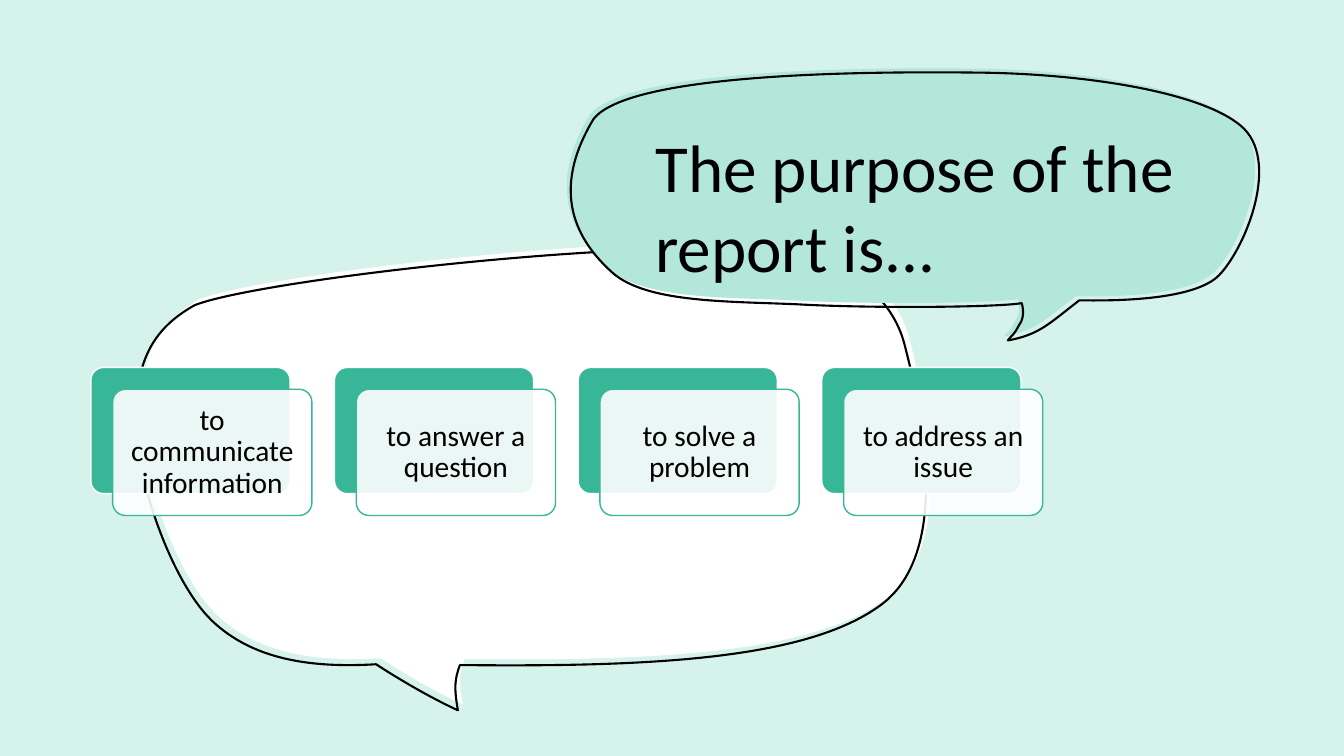
from dataclasses import dataclass
from typing import NamedTuple

from lxml import etree
from pptx import Presentation
from pptx import util as u
from pptx.dml.color import RGBColor
from pptx.enum import shapes, text
from pptx.oxml.ns import qn
from pptx.shapes.autoshape import Shape
from pptx.slide import Slide


@dataclass(frozen=True)
class Theme:
    font: str = "Calibri"
    title_size: float = 48
    card_size: float = 21
    outline_width: float = 1.5
    card_line_width: float = 1
    ink: RGBColor = RGBColor(0x00, 0x00, 0x00)
    paper: RGBColor = RGBColor(0xFF, 0xFF, 0xFF)
    backdrop: RGBColor = RGBColor(0xD5, 0xF2, 0xEB)
    mint: RGBColor = RGBColor(0xB2, 0xE7, 0xDA)
    green: RGBColor = RGBColor(0x38, 0xB6, 0x98)
    card_alpha: int = 90


class Point(NamedTuple):
    x: float
    y: float


class Curve(NamedTuple):
    control_a: Point
    control_b: Point
    end: Point


class Box(NamedTuple):
    left: float
    top: float
    width: float
    height: float


@dataclass(frozen=True)
class Bubble:
    box: Box
    start: Point
    curves: list[Curve]
    fill: RGBColor
    outline_shift: Point


THEME = Theme()
SLIDE_WIDTH, SLIDE_HEIGHT = u.Cm(33.87), u.Cm(19.05)
CARD_LEFT, CARD_TOP, CARD_PITCH = 2.29, 9.26, 6.14
CARD_WIDTH, CARD_HEIGHT, CARD_OFFSET = 5.02, 3.18, 0.55
CARD_MARGIN = 0.23

PURPOSES = [
    "to communicate information",
    "to answer a question",
    "to solve a problem",
    "to address an issue",
]


def curve(ax: float, ay: float, bx: float, by: float, x: float, y: float) -> Curve:
    return Curve(Point(ax, ay), Point(bx, by), Point(x, y))


ANSWER_BUBBLE = Bubble(
    Box(3.56, 6.12, 19.91, 11.63),
    Point(9.6, 16.59),
    [
        curve(7.92, 16.69, 6.48, 16.46, 5.46, 15.49),
        curve(4.47, 14.53, 3.63, 12.12, 3.58, 10.8),
        curve(3.51, 9.47, 3.63, 8.31, 5.03, 7.54),
        curve(6.63, 6.91, 15.9, 5.84, 19.74, 6.17),
        curve(21.51, 6.38, 22.61, 7.37, 22.91, 8.51),
        curve(23.32, 10.08, 24.16, 13.77, 22.3, 15.11),
        curve(20.42, 16.48, 16.46, 16.66, 11.71, 16.61),
        curve(11.58, 16.97, 11.56, 17.17, 11.66, 17.75),
        curve(10.62, 17.27, 9.6, 16.59, 9.6, 16.59),
    ],
    THEME.paper,
    Point(-0.12, 0.15),
)

TITLE_BUBBLE = Bubble(
    Box(14.27, 1.73, 17.35, 6.76),
    Point(25.65, 7.54),
    [
        curve(24.99, 7.65, 21.77, 7.67, 20.02, 7.57),
        curve(18.26, 7.49, 16.18, 7.54, 15.32, 6.76),
        curve(14.45, 5.97, 13.74, 4.75, 14.86, 2.9),
        curve(15.77, 1.73, 21.77, 1.7, 24.49, 1.73),
        curve(27.2, 1.75, 30.15, 2.21, 31.17, 3.07),
        curve(32.18, 3.91, 31.32, 6.1, 30.63, 6.83),
        curve(29.95, 7.54, 27.56, 7.47, 27.1, 7.47),
        curve(26.34, 8.05, 26.11, 8.33, 25.3, 8.48),
        curve(25.45, 8.28, 25.43, 8.38, 25.58, 8.1),
        curve(25.76, 7.87, 25.65, 7.54, 25.65, 7.54),
    ],
    THEME.mint,
    Point(0.1, 0.1),
)


def add_command(trail, tag: str, points: tuple[Point, ...], box: Box) -> None:
    command = etree.SubElement(trail, qn(tag))
    for point in points:
        spot = etree.SubElement(command, qn("a:pt"))
        spot.set("x", str(int(u.Cm(point.x - box.left))))
        spot.set("y", str(int(u.Cm(point.y - box.top))))


def draw_outline(slide: Slide, bubble: Bubble, shift: Point) -> Shape:
    box = bubble.box
    builder = slide.shapes.build_freeform(u.Cm(bubble.start.x), u.Cm(bubble.start.y))
    builder.add_line_segments([(u.Cm(c.end.x), u.Cm(c.end.y)) for c in bubble.curves])
    outline = builder.convert_to_shape()
    outline.left, outline.top = u.Cm(box.left + shift.x), u.Cm(box.top + shift.y)
    outline.width, outline.height = u.Cm(box.width), u.Cm(box.height)
    outline.shadow.inherit = False
    trail = outline.element.find(f".//{qn('a:path')}")
    for command in list(trail):
        trail.remove(command)
    trail.set("w", str(int(outline.width)))
    trail.set("h", str(int(outline.height)))
    add_command(trail, "a:moveTo", (bubble.start,), box)
    for segment in bubble.curves:
        add_command(trail, "a:cubicBezTo", segment, box)
    etree.SubElement(trail, qn("a:close"))
    return outline


def draw_bubble(slide: Slide, bubble: Bubble) -> None:
    body = draw_outline(slide, bubble, Point(0, 0))
    body.fill.solid()
    body.fill.fore_color.rgb = bubble.fill
    body.line.fill.background()
    contour = draw_outline(slide, bubble, bubble.outline_shift)
    contour.fill.background()
    contour.line.color.rgb = THEME.ink
    contour.line.width = u.Pt(THEME.outline_width)


def write(paragraph, words: str, size: float) -> None:
    run = paragraph.add_run()
    run.text = words
    run.font.name = THEME.font
    run.font.size = u.Pt(size)
    run.font.color.rgb = THEME.ink


def draw_backdrop(slide: Slide) -> None:
    for fill in (slide.background.fill, add_cover(slide).fill):
        fill.solid()
        fill.fore_color.rgb = THEME.backdrop


def add_cover(slide: Slide) -> Shape:
    cover = slide.shapes.add_shape(
        shapes.MSO_SHAPE.RECTANGLE, 0, 0, SLIDE_WIDTH, SLIDE_HEIGHT
    )
    cover.shadow.inherit = False
    cover.line.fill.background()
    return cover


def draw_title(slide: Slide, words: str) -> None:
    title = slide.shapes.title
    title.left, title.top = u.Cm(16.26), u.Cm(3.02)
    title.width, title.height = u.Cm(15.77), u.Cm(4.37)
    frame = title.text_frame
    frame.word_wrap = True
    frame.auto_size = text.MSO_AUTO_SIZE.NONE
    frame.vertical_anchor = text.MSO_ANCHOR.TOP
    heading = frame.paragraphs[0]
    heading.alignment = text.PP_ALIGN.LEFT
    write(heading, words, THEME.title_size)
    slide.shapes.element.append(title.element)


def draw_panel(slide: Slide, left: float, top: float, fill: RGBColor, line: RGBColor) -> Shape:
    panel = slide.shapes.add_shape(
        shapes.MSO_SHAPE.ROUNDED_RECTANGLE,
        u.Cm(left), u.Cm(top), u.Cm(CARD_WIDTH), u.Cm(CARD_HEIGHT),
    )
    panel.adjustments[0] = 0.1
    panel.shadow.inherit = False
    panel.fill.solid()
    panel.fill.fore_color.rgb = fill
    panel.line.color.rgb = line
    panel.line.width = u.Pt(THEME.card_line_width)
    return panel


def draw_card(slide: Slide, left: float, words: str) -> None:
    draw_panel(slide, left, CARD_TOP, THEME.green, THEME.paper)
    front = draw_panel(
        slide, left + CARD_OFFSET, CARD_TOP + CARD_OFFSET, THEME.paper, THEME.green
    )
    fill_color = front.element.find(f".//{qn('a:srgbClr')}")
    etree.SubElement(fill_color, qn("a:alpha")).set("val", str(THEME.card_alpha * 1000))
    frame = front.text_frame
    frame.word_wrap = True
    frame.vertical_anchor = text.MSO_ANCHOR.MIDDLE
    frame.margin_left = frame.margin_right = u.Cm(CARD_MARGIN)
    frame.margin_top = frame.margin_bottom = u.Cm(CARD_MARGIN)
    purpose = frame.paragraphs[0]
    purpose.alignment = text.PP_ALIGN.CENTER
    purpose.line_spacing = 0.9
    write(purpose, words, THEME.card_size)


def main() -> None:
    deck = Presentation()
    deck.slide_width, deck.slide_height = SLIDE_WIDTH, SLIDE_HEIGHT
    slide = deck.slides.add_slide(deck.slide_layouts.get_by_name("Title Only"))
    draw_backdrop(slide)
    for bubble in (ANSWER_BUBBLE, TITLE_BUBBLE):
        draw_bubble(slide, bubble)
    draw_title(slide, "The purpose of the report is...")
    for column, words in enumerate(PURPOSES):
        draw_card(slide, CARD_LEFT + column * CARD_PITCH, words)
    deck.save("out.pptx")


if __name__ == "__main__":
    main()
